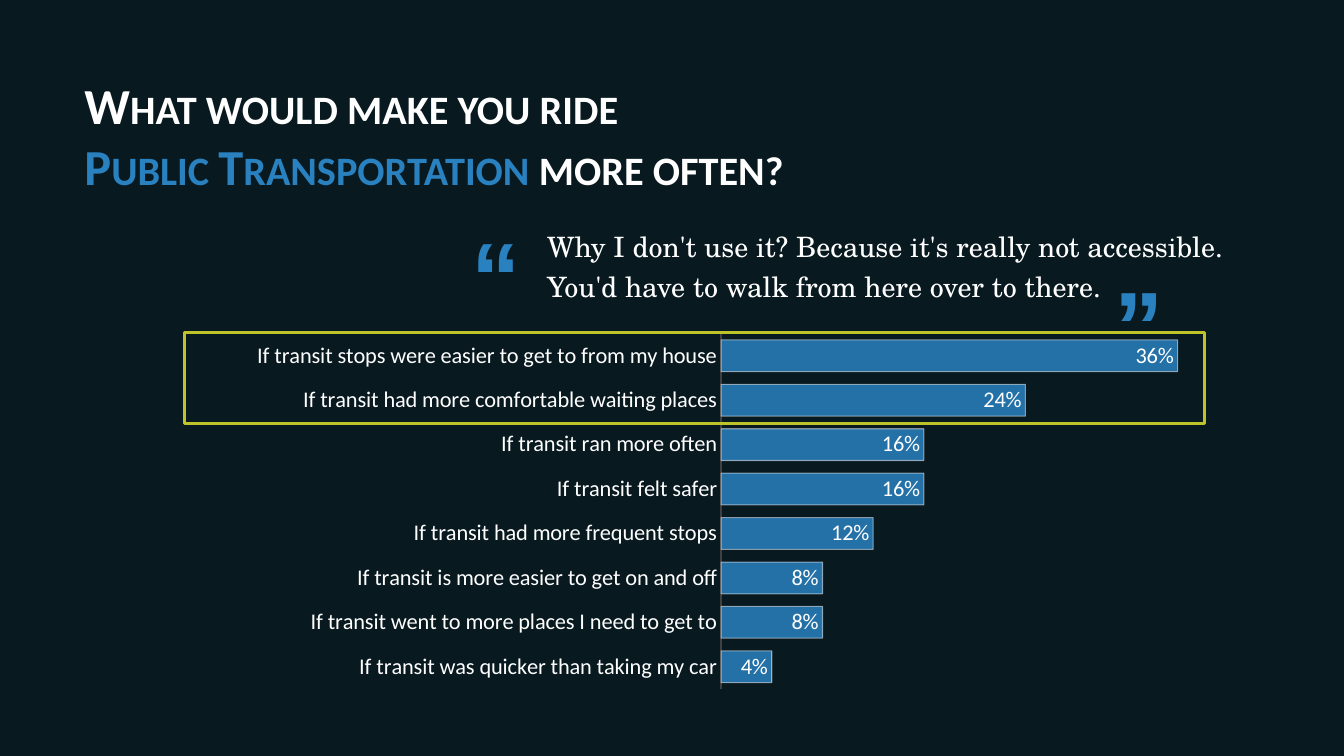
from lxml.etree import SubElement
from pptx import Presentation
from pptx.chart.data import CategoryChartData as ChartData
from pptx.dml.color import RGBColor
from pptx.enum.chart import XL_CHART_TYPE as ChartKind
from pptx.enum.chart import XL_LABEL_POSITION as LabelPlace
from pptx.enum.chart import XL_TICK_MARK as TickMark
from pptx.enum.shapes import MSO_SHAPE as Preset
from pptx.enum.text import MSO_AUTO_SIZE as AutoSize
from pptx.oxml import parse_xml
from pptx.oxml.ns import qn
from pptx.util import Cm, Pt

NIGHT = RGBColor(0x08, 0x19, 0x20)
BLUE = RGBColor(0x2A, 0x81, 0xBF)
WHITE = RGBColor(0xFF, 0xFF, 0xFF)
GREY = RGBColor(0x40, 0x40, 0x40)
LIME = RGBColor(0xBE, 0xC3, 0x29)

TITLE = [
    [("What would make you ride", WHITE)],
    [("Public Transportation ", BLUE), ("more often?", WHITE)],
]
QUOTE = ("Why I don't use it? Because it's really not accessible. "
         "You'd have to walk from here over to there.")
ANSWERS = {
    "If transit was quicker than taking my car": 0.04,
    "If transit went to more places I need to get to": 0.08,
    "If transit is more easier to get on and off": 0.08,
    "If transit had more frequent stops": 0.12,
    "If transit felt safer": 0.16,
    "If transit ran more often": 0.16,
    "If transit had more comfortable waiting places": 0.24,
    "If transit stops were easier to get to from my house": 0.36,
}
PLOT_AREA = {"x": 0.518, "y": 0.032, "w": 0.467, "h": 0.935}
CHART_NS = "http://schemas.openxmlformats.org/drawingml/2006/chart"


def set_alpha(color_format_parent, percent):
    """Make the solid colour inside an XML element partly transparent."""
    color = color_format_parent.find(qn("a:solidFill"))[0]
    SubElement(color, qn("a:alpha")).set("val", str(percent * 1000))


class SurveySlide:
    font = "Calibri"

    def __init__(self, deck):
        self.page = deck.slides.add_slide(deck.slide_layouts[6])
        self.page.background.fill.solid()
        self.page.background.fill.fore_color.rgb = NIGHT

    def style(self, font, size, color=WHITE, name=None):
        font.name = name or self.font
        font.size = Pt(size)
        font.color.rgb = color

    def text(self, place, lines, size, name=None, heading=False):
        """Add a text box; each line is a list of (words, colour) spans."""
        box = self.page.shapes.add_textbox(*map(Cm, place))
        frame = box.text_frame
        frame.word_wrap = True
        frame.auto_size = AutoSize.SHAPE_TO_FIT_TEXT
        for index, spans in enumerate(lines):
            para = frame.add_paragraph() if index else frame.paragraphs[0]
            for words, color in spans:
                span = para.add_run()
                span.text = words
                self.style(span.font, size, color, name)
                if heading:
                    span.font.bold = True
                    span.font._element.set("cap", "small")
        return frame

    def bar_chart(self, place, answers):
        data = ChartData(number_format="0%")
        data.categories = list(answers)
        data.add_series("Series 1", list(answers.values()))
        chart = self.page.shapes.add_chart(
            ChartKind.BAR_CLUSTERED, *map(Cm, place), data).chart
        chart.has_legend = chart.has_title = False
        self.style(chart.font, 10)

        # Axes
        answer_axis, share_axis = chart.category_axis, chart.value_axis
        answer_axis.major_tick_mark = TickMark.NONE
        answer_axis.format.line.color.rgb = GREY
        answer_axis.format.line.width = Pt(1.5)
        self.style(answer_axis.tick_labels.font, 16)
        share_axis.minimum_scale, share_axis.maximum_scale = 0, 0.4
        share_axis.has_major_gridlines = False
        share_axis.visible = False

        # Bars
        plot = chart.plots[0]
        plot.gap_width = 40
        plot.vary_by_categories = False
        bars = plot.series[0].format
        bars.fill.solid()
        bars.fill.fore_color.rgb = BLUE
        bars.line.color.rgb = WHITE
        bars.line.width = Pt(0.75)
        shape_style = plot.series[0]._element.find(qn("c:spPr"))
        set_alpha(shape_style, 85)
        set_alpha(shape_style.find(qn("a:ln")), 50)

        # Labels
        labels = plot.series[0].data_labels
        labels.show_value = True
        labels.position = LabelPlace.INSIDE_END
        labels.number_format = "0%"
        labels.number_format_is_linked = False
        self.style(labels.font, 16)

        # Fixed inner plot area
        modes = "".join(f'<c:{key}Mode val="edge"/>' for key in "xy")
        sizes = "".join(f'<c:{key} val="{share}"/>'
                        for key, share in PLOT_AREA.items())
        layout = parse_xml(
            f'<c:layout xmlns:c="{CHART_NS}"><c:manualLayout>'
            f'<c:layoutTarget val="inner"/>{modes}{sizes}'
            '</c:manualLayout></c:layout>')
        plot_area = chart._chartSpace.chart.plotArea
        for old_layout in plot_area.findall(qn("c:layout")):
            plot_area.remove(old_layout)
        plot_area.insert(0, layout)

    def frame(self, place, color):
        outline = self.page.shapes.add_shape(Preset.RECTANGLE, *map(Cm, place))
        outline.shadow.inherit = False
        outline.fill.background()
        outline.line.color.rgb = color
        outline.line.width = Pt(2.25)


def main():
    deck = Presentation()
    deck.slide_width, deck.slide_height = Cm(33.87), Cm(19.05)
    slide = SurveySlide(deck)

    # Title
    slide.text((1.88, 1.75, 30.07, 3.33), TITLE, 36, heading=True)

    # Survey answers
    slide.bar_chart((3.99, 8.1, 27.38, 9.58), ANSWERS)

    # Quotation and its marks
    quote = slide.text((13.54, 5.49, 18.19, 2.21), [[(QUOTE, WHITE)]], 20,
                       name="TeX Gyre Schola")
    quote.paragraphs[0].line_spacing = 1.2
    quote.paragraphs[0].space_before = Pt(12)
    for mark, left, top, width in (("“", 11.63, 4.65, 1.6),
                                   ("”", 27.84, 5.89, 2.03)):
        slide.text((left, top, width, 4.01), [[(mark, BLUE)]], 88,
                   name="Arial", heading=True)

    # Highlight around the two top answers
    slide.frame((4.65, 8.38, 25.7, 2.29), LIME)

    deck.save("out.pptx")


if __name__ == "__main__":
    main()
